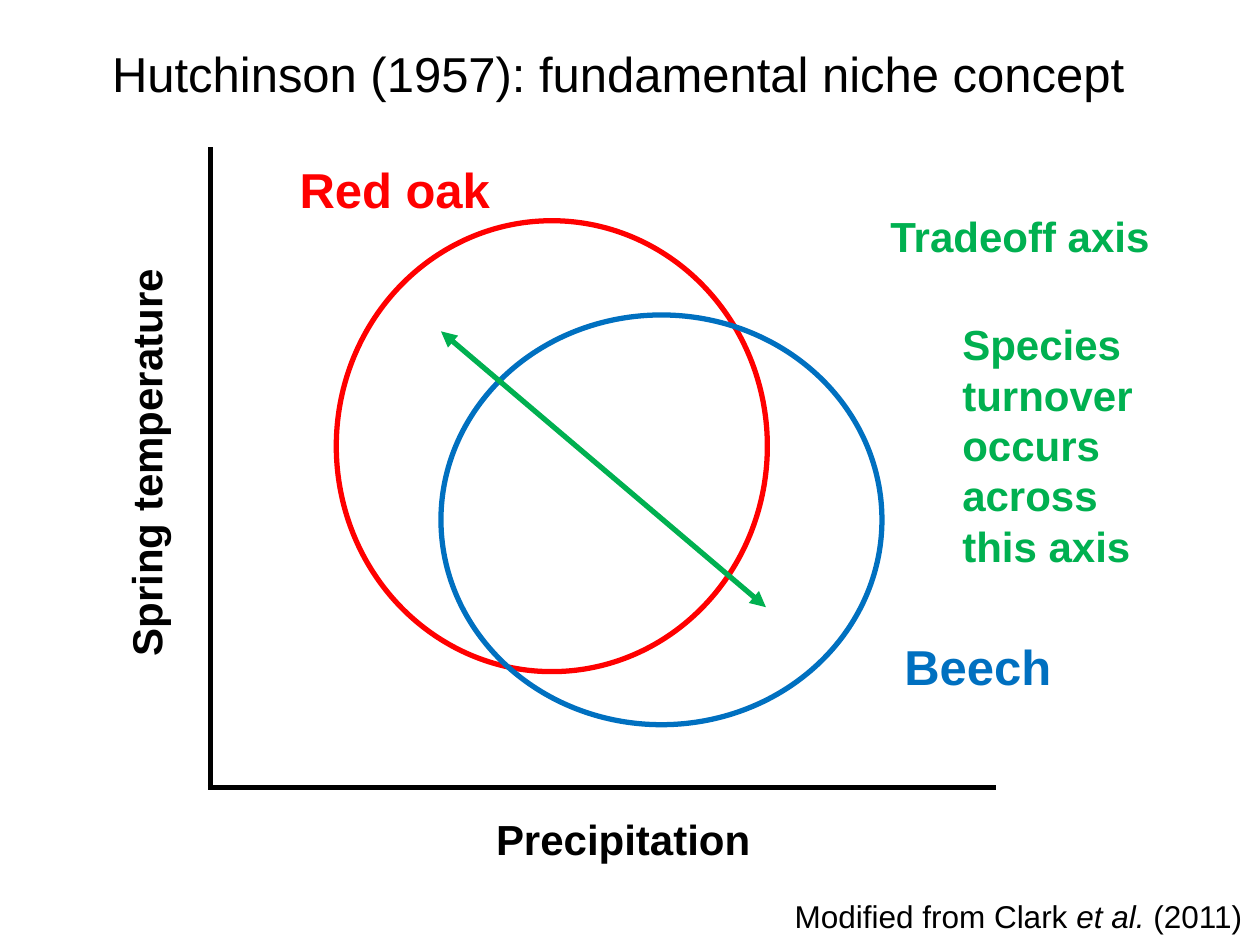
from dataclasses import dataclass

from lxml import etree
from pptx import Presentation
from pptx.dml.color import RGBColor
from pptx.enum.shapes import MSO_CONNECTOR, MSO_SHAPE
from pptx.enum.text import MSO_AUTO_SIZE
from pptx.oxml.ns import qn
from pptx.slide import Slide
from pptx.util import Cm, Pt

STRAIGHT = MSO_CONNECTOR.STRAIGHT
OVAL = MSO_SHAPE.OVAL
GROW = MSO_AUTO_SIZE.SHAPE_TO_FIT_TEXT

BLACK = RGBColor(0x00, 0x00, 0x00)
RED = RGBColor(0xFF, 0x00, 0x00)
BLUE = RGBColor(0x00, 0x70, 0xC0)
GREEN = RGBColor(0x00, 0xB0, 0x50)

FONT = "Arial"
LINE_WIDTH = Pt(3)


@dataclass(frozen=True)
class Span:
    text: str
    italic: bool = False


@dataclass(frozen=True)
class Label:
    spans: tuple[Span, ...]
    left: float
    top: float
    width: float
    height: float
    size: int
    color: RGBColor = BLACK
    bold: bool = True
    rotation: int = 0
    wrap: bool = False


@dataclass(frozen=True)
class Niche:
    left: float
    top: float
    width: float
    height: float
    color: RGBColor


@dataclass(frozen=True)
class Line:
    start: tuple[float, float]
    end: tuple[float, float]
    color: RGBColor = BLACK
    arrowheads: bool = False


# Content, lengths in centimetres
AXES = (
    Line((4.24, 2.97), (4.24, 15.88)),
    Line((4.19, 15.88), (20.07, 15.88)),
)
NICHES = (
    Niche(6.78, 4.45, 8.69, 9.09, RED),
    Niche(8.89, 6.35, 8.89, 8.26, BLUE),
)
TRADEOFF = Line((8.89, 6.68), (15.44, 12.24), GREEN, arrowheads=True)
LABELS = (
    Label((Span("Hutchinson (1957): fundamental niche concept"),),
          2.01, 0.76, 21.18, 1.45, 28, bold=False),
    Label((Span("Precipitation"),), 9.75, 16.28, 5.69, 1.27, 24),
    Label((Span("Spring temperature"),), -1.27, 8.64, 8.41, 1.27, 24, rotation=270),
    Label((Span("Red oak"),), 5.79, 3.1, 4.39, 1.45, 28, RED),
    Label((Span("Beech"),), 17.98, 12.7, 3.51, 1.45, 28, BLUE),
    Label((Span("Tradeoff axis"),), 17.7, 4.11, 5.77, 1.27, 24, GREEN),
    Label((Span("Species turnover occurs across this axis"),),
          19.15, 6.3, 4.01, 5.38, 24, GREEN, wrap=True),
    Label((Span("Modified from Clark "), Span("et al. ", italic=True), Span("(2011)")),
          15.77, 17.96, 9.63, 1.02, 18, bold=False),
)


def draw_line(page: Slide, line: Line) -> None:
    connector = page.shapes.add_connector(
        STRAIGHT, *(Cm(value) for value in line.start + line.end))
    connector.line.color.rgb = line.color
    connector.line.width = LINE_WIDTH
    properties = connector._element.spPr
    if line.arrowheads:
        outline = properties.find(qn("a:ln"))
        for tag in ("a:headEnd", "a:tailEnd"):
            etree.SubElement(outline, qn(tag), type="triangle")
    etree.SubElement(properties, qn("a:effectLst"))


def draw_niche(page: Slide, niche: Niche) -> None:
    ellipse = page.shapes.add_shape(
        OVAL, Cm(niche.left), Cm(niche.top), Cm(niche.width), Cm(niche.height))
    ellipse.shadow.inherit = False
    ellipse.fill.background()
    ellipse.line.color.rgb = niche.color
    ellipse.line.width = LINE_WIDTH


def draw_label(page: Slide, label: Label) -> None:
    box = page.shapes.add_textbox(
        Cm(label.left), Cm(label.top), Cm(label.width), Cm(label.height))
    box.rotation = label.rotation
    frame = box.text_frame
    frame.word_wrap = label.wrap
    frame.auto_size = GROW
    para = frame.paragraphs[0]
    for span in label.spans:
        run = para.add_run()
        run.text = span.text
        run.font.name = FONT
        run.font.size = Pt(label.size)
        run.font.bold = label.bold
        run.font.italic = span.italic
        run.font.color.rgb = label.color


def main() -> None:
    deck = Presentation()
    deck.slide_width, deck.slide_height = Cm(25.4), Cm(19.05)
    page = deck.slides.add_slide(deck.slide_layouts[6])

    # Climate axes, species niches and the axis between them
    for axis in AXES:
        draw_line(page, axis)
    for niche in NICHES:
        draw_niche(page, niche)
    draw_line(page, TRADEOFF)

    # Title, labels and credit
    for label in LABELS:
        draw_label(page, label)

    deck.save("out.pptx")


if __name__ == "__main__":
    main()
